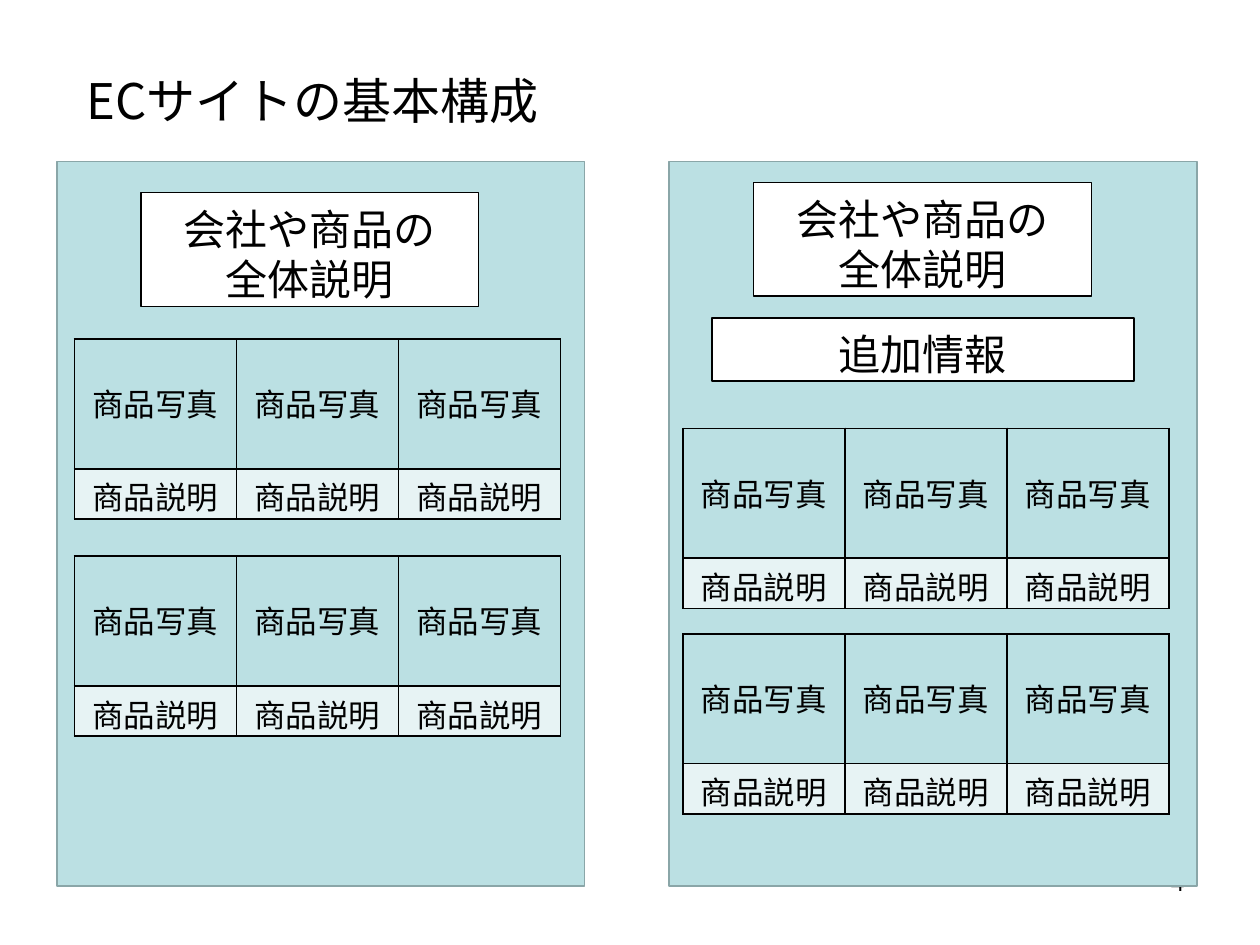
from itertools import product

from lxml.etree import SubElement
from pptx import Presentation
from pptx.dml.color import RGBColor
from pptx.enum.shapes import MSO_SHAPE as Shape
from pptx.enum.text import MSO_ANCHOR as Anchor, PP_ALIGN as Align
from pptx.oxml.ns import qn
from pptx.util import Pt

COLORS = {
    "text": "000000", "border": "000000", "paper": "FFFFFF",
    "panel": "BBE0E3", "panel_line": "8AA6A8", "description": "E7F3F4",
}
JAPANESE = "Noto Sans CJK JP"
TITLE = "ECサイトの基本構成"
PAGE_NUMBER = "4"
OVERVIEW = ["会社や商品の", "全体説明"]
EXTRA = ["追加情報"]
PRODUCT = [("商品写真", "panel", 74.2, 3.6), ("商品説明", "description", 28.6, 0)]
PANEL_TOP, PANEL_WIDTH, PANEL_HEIGHT = 92.2, 301.7, 414
CARD_WIDTH, CARD_COLUMNS = 92.6, 3
LAYOUTS = [
    {"left": 32.4, "cards_left": 42.5, "card_tops": [193.7, 317.8],
     "labels": [(OVERVIEW, 80.6, 110.2, 193, 64.8)]},
    {"left": 382.3, "cards_left": 390.2, "card_tops": [244.8, 362.2],
     "labels": [(OVERVIEW, 430.6, 104.4, 193, 64.8),
                (EXTRA, 406.8, 181.8, 241.2, 36)]},
]


def rgb(name):
    return RGBColor.from_string(COLORS[name])


def write(para, lines, size, align, font=JAPANESE, spacing=None):
    para.alignment = align
    if spacing:
        para.line_spacing = Pt(spacing)
    for index, line in enumerate(lines):
        if index:
            para.add_line_break()
        span = para.add_run()
        span.text = line
        span.font.size = Pt(size)
        span.font.name = font
        span.font.color.rgb = rgb("text")
        SubElement(span.font._element, qn("a:ea")).set("typeface", font)


def add_text(page, text, left, top, width, height, size, align, font, anchor):
    box = page.shapes.add_textbox(Pt(left), Pt(top), Pt(width), Pt(height))
    frame = box.text_frame
    frame.word_wrap = True
    frame.vertical_anchor = anchor
    write(frame.paragraphs[0], [text], size, align, font)


def add_box(page, left, top, width, height, fill, line, weight):
    box = page.shapes.add_shape(
        Shape.RECTANGLE, Pt(left), Pt(top), Pt(width), Pt(height))
    box.shadow.inherit = False
    box.fill.solid()
    box.fill.fore_color.rgb = rgb(fill)
    box.line.color.rgb = rgb(line)
    box.line.width = Pt(weight)
    return box


def add_label(page, lines, left, top, width, height):
    box = add_box(page, left, top, width, height, "paper", "border", 0.75)
    frame = box.text_frame
    frame.word_wrap = True
    frame.vertical_anchor = Anchor.TOP
    frame.margin_top = Pt(6.3)
    frame.margin_bottom = 0
    write(frame.paragraphs[0], lines, 24, Align.CENTER, spacing=28.6)


def add_borders(cell):
    properties = cell._tc.get_or_add_tcPr()
    for side in ("a:lnL", "a:lnR", "a:lnT", "a:lnB"):
        line = SubElement(properties, qn(side), w=str(Pt(1)))
        fill = SubElement(line, qn("a:solidFill"))
        SubElement(fill, qn("a:srgbClr")).set("val", COLORS["border"])


def add_card(page, left, top):
    height = sum(row[2] for row in PRODUCT)
    table = page.shapes.add_table(
        len(PRODUCT), 1, Pt(left), Pt(top), Pt(CARD_WIDTH), Pt(height)).table
    table.columns[0].width = Pt(CARD_WIDTH)
    for index, (text, fill, row_height, bottom) in enumerate(PRODUCT):
        table.rows[index].height = Pt(row_height)
        cell = table.cell(index, 0)
        add_borders(cell)
        cell.fill.solid()
        cell.fill.fore_color.rgb = rgb(fill)
        cell.vertical_anchor = Anchor.MIDDLE
        cell.margin_top = Pt(7.2)
        cell.margin_bottom = Pt(bottom)
        write(cell.text_frame.paragraphs[0], [text], 18, Align.CENTER,
              spacing=21.4)


def main():
    deck = Presentation()
    deck.slide_width, deck.slide_height = Pt(720), Pt(540)
    page = deck.slides.add_slide(deck.slide_layouts[6])
    add_text(page, PAGE_NUMBER, 516.2, 491.8, 167.8, 37.4, 14,
             Align.RIGHT, "Arial", Anchor.TOP)
    add_text(page, TITLE, 42.5, 36.7, 624.2, 41, 28,
             Align.LEFT, JAPANESE, Anchor.MIDDLE)
    for layout in LAYOUTS:
        add_box(page, layout["left"], PANEL_TOP, PANEL_WIDTH, PANEL_HEIGHT,
                "panel", "panel_line", 1)
        for label in layout["labels"]:
            add_label(page, *label)
        for top, column in product(layout["card_tops"], range(CARD_COLUMNS)):
            add_card(page, layout["cards_left"] + column * CARD_WIDTH, top)
    deck.save("out.pptx")


if __name__ == "__main__":
    main()
